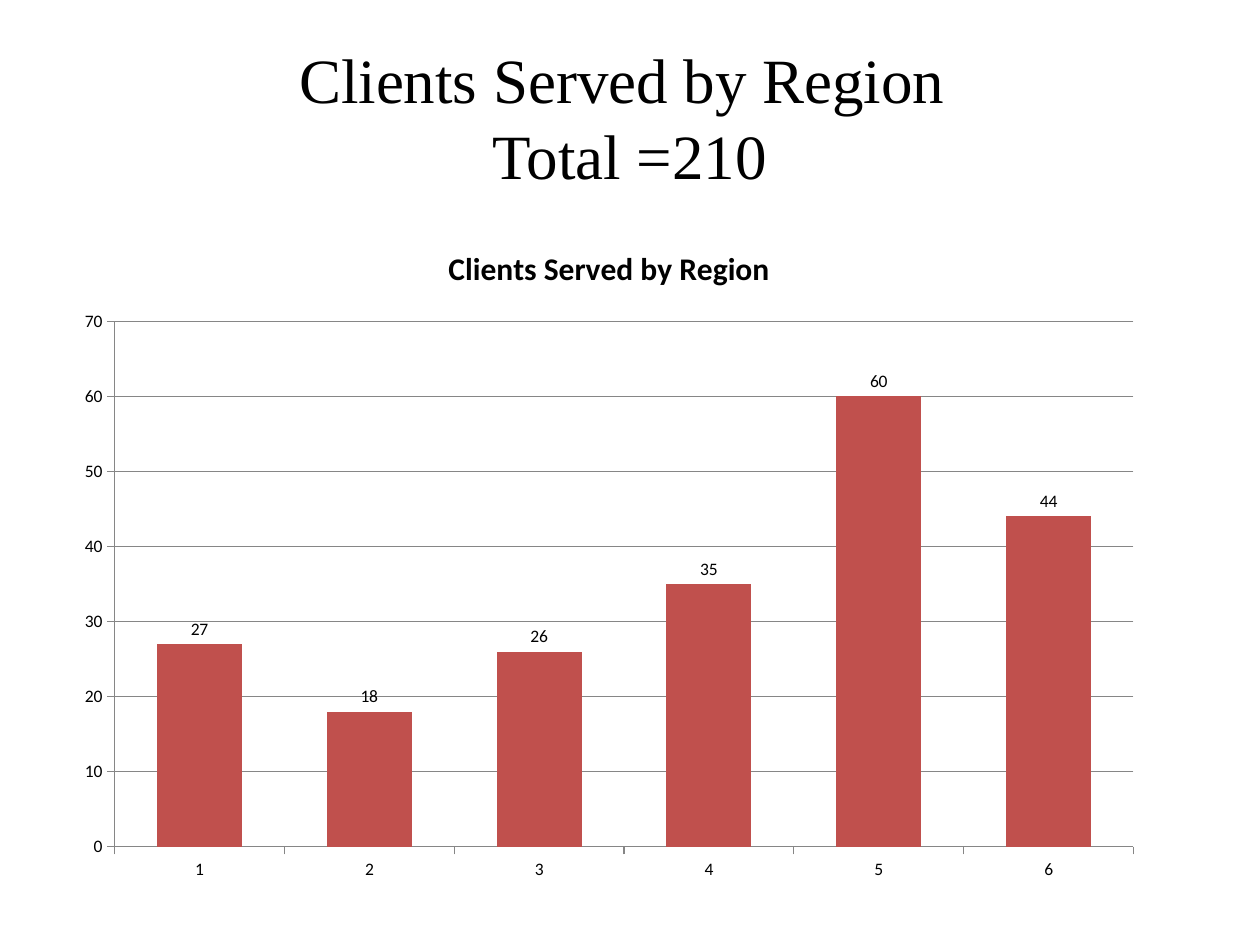
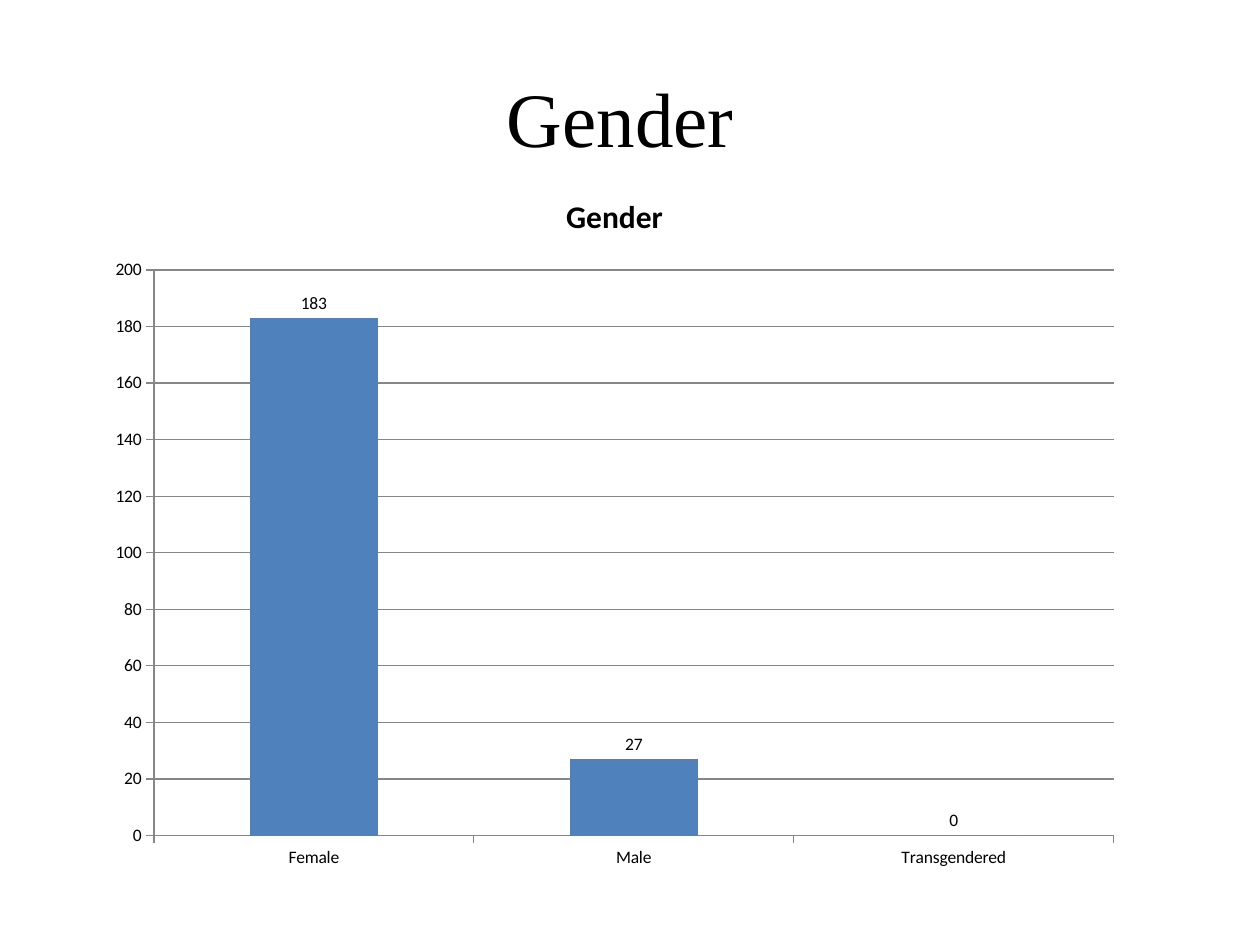
"""Build two client statistics slides, each with a title and a column chart."""
from dataclasses import dataclass

from pptx import Presentation
from pptx.chart.data import CategoryChartData
from pptx.dml.color import RGBColor
from pptx.enum.chart import XL_CHART_TYPE, XL_LABEL_POSITION, XL_TICK_MARK
from pptx.enum.text import MSO_ANCHOR, PP_ALIGN
from pptx.util import Cm, Pt

SLIDES = [
    {
        "title": ["Clients Served by Region ", "Total =210"],
        "title_size": 36,
        "chart_title": "Clients Served by Region",
        "values": {"1": 27, "2": 18, "3": 26, "4": 35, "5": 60, "6": 44},
        "color": "red",
        "gap": 100,
        "box": (1.27, 4.45, 22.02, 13.54),
    },
    {
        "title": ["Gender "],
        "title_size": 44,
        "chart_title": "Gender",
        "values": {"Female": 183, "Male": 27, "Transgendered": 0},
        "color": "blue",
        "gap": 150,
        "box": (1.91, 3.38, 20.96, 14.4),
    },
]
SLIDE_SIZE = (25.4, 19.05)
TITLE_BOX = (1.27, 0.76, 22.86, 3.18)


@dataclass(frozen=True)
class Theme:
    text: str = "000000"
    axis: str = "868686"
    red: str = "C0504D"
    blue: str = "4F81BD"
    title_font: str = "Times New Roman"
    chart_font: str = "Calibri"
    chart_title_size: int = 18
    label_size: int = 10
    line_width: float = 0.75


THEME = Theme()


def rgb(name):
    return RGBColor.from_string(getattr(THEME, name))


def style_font(font, name, size, bold=False):
    font.name, font.size, font.bold = name, Pt(size), bold
    font.color.rgb = rgb("text")


def write(tf, lines, *, font, size, bold=False, align=PP_ALIGN.CENTER):
    p = tf.paragraphs[0]
    p.alignment = align
    p.text = "\v".join(lines)
    for r in p.runs:
        style_font(r.font, font, size, bold)


def draw_line(line):
    line.color.rgb = rgb("axis")
    line.width = Pt(THEME.line_width)


def add_title(s, lines, size):
    tf = s.shapes.add_textbox(*map(Cm, TITLE_BOX)).text_frame
    tf.word_wrap = True
    tf.vertical_anchor = MSO_ANCHOR.MIDDLE
    write(tf, lines, font=THEME.title_font, size=size)


def add_columns(s, item):
    data = CategoryChartData()
    data.categories = list(item["values"])
    data.add_series("Series 1", list(item["values"].values()))
    chart = s.shapes.add_chart(
        XL_CHART_TYPE.COLUMN_CLUSTERED, *map(Cm, item["box"]), data
    ).chart
    style_font(chart.font, THEME.chart_font, THEME.label_size)
    chart.has_legend = False
    chart.has_title = True
    write(chart.chart_title.text_frame, [item["chart_title"]],
          font=THEME.chart_font, size=THEME.chart_title_size, bold=True)
    chart.chart_title.include_in_layout = False

    for axis in (chart.category_axis, chart.value_axis):
        axis.major_tick_mark = XL_TICK_MARK.OUTSIDE
        axis.minor_tick_mark = XL_TICK_MARK.NONE
        draw_line(axis.format.line)
    chart.value_axis.has_major_gridlines = True
    draw_line(chart.value_axis.major_gridlines.format.line)

    plot = chart.plots[0]
    plot.vary_by_categories = False
    plot.gap_width = item["gap"]
    fill = plot.series[0].format.fill
    fill.solid()
    fill.fore_color.rgb = rgb(item["color"])
    plot.has_data_labels = True
    labels = plot.data_labels
    labels.show_value = True
    labels.position = XL_LABEL_POSITION.OUTSIDE_END
    style_font(labels.font, THEME.chart_font, THEME.label_size)


def main():
    prs = Presentation()
    prs.slide_width, prs.slide_height = map(Cm, SLIDE_SIZE)
    for item in SLIDES:
        s = prs.slides.add_slide(prs.slide_layouts[6])
        add_title(s, item["title"], item["title_size"])
        add_columns(s, item)
    prs.save("out.pptx")


if __name__ == "__main__":
    main()
